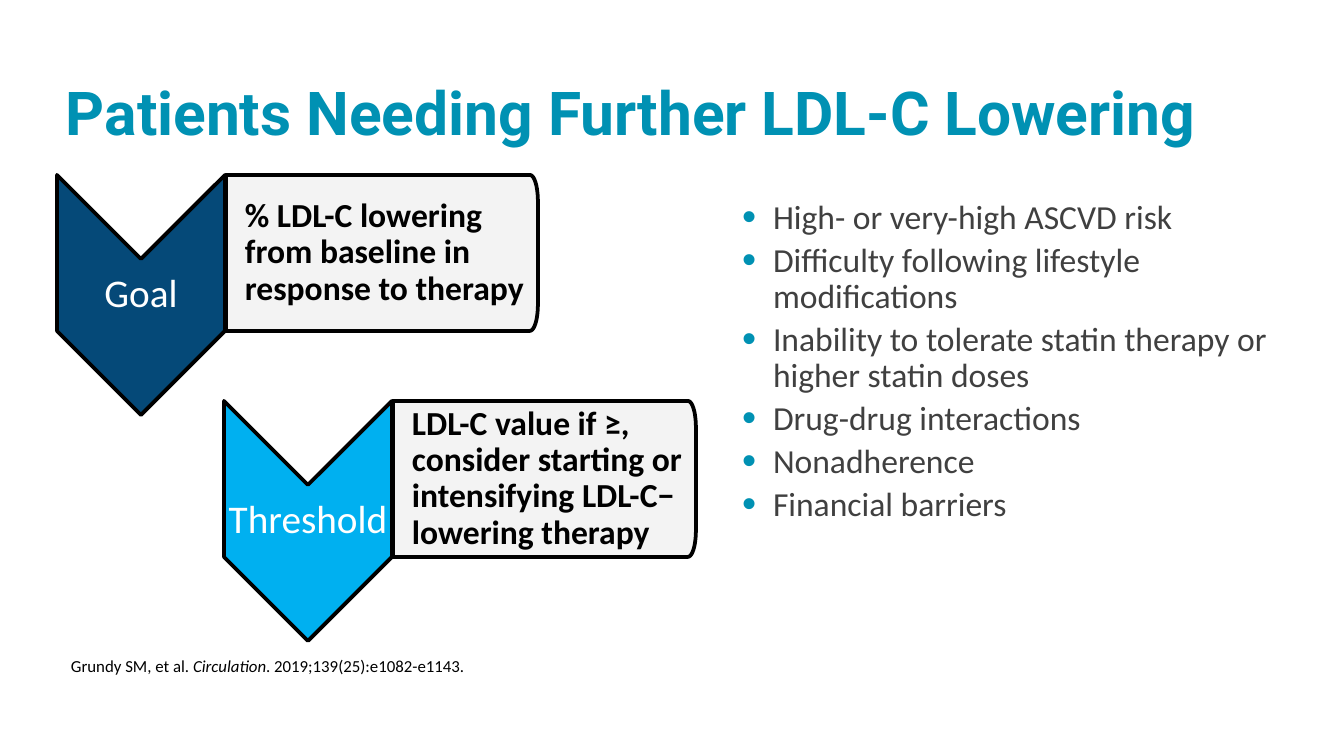
import math

import lxml.etree
import pptx
import pptx.dml.color
import pptx.enum.text
import pptx.oxml.ns
import pptx.util

PX = 914400 / 134.4  # EMU in one px
HUES = {
    "teal": "0091B3",
    "navy": "054978",
    "sky": "00B0F0",
    "pale": "F2F2F2",
    "gray": "404040",
    "black": "000000",
    "white": "FFFFFF",
}
ALIGN = pptx.enum.text.PP_ALIGN
ANCHOR = pptx.enum.text.MSO_ANCHOR

RISKS = [
    "High- or very-high ASCVD risk",
    "Difficulty following lifestyle modifications",
    "Inability to tolerate statin therapy or higher statin doses",
    "Drug-drug interactions",
    "Nonadherence",
    "Financial barriers",
]


def emu(px):
    return round(px * PX)


def color(name):
    return pptx.dml.color.RGBColor.from_string(HUES[name])


def add(parent, tag, **attrs):
    return lxml.etree.SubElement(parent, pptx.oxml.ns.qn(tag), attrs)


def set_frame(frame, pads=(0, 0, 0, 0), anchor=ANCHOR.TOP):
    frame.word_wrap = True
    frame.vertical_anchor = anchor
    frame.margin_left, frame.margin_top, frame.margin_right, frame.margin_bottom = map(emu, pads)


def style(para, size, hue, face="Calibri", bold=False, align=ALIGN.LEFT):
    para.alignment = align
    para.line_spacing = 0.9
    font = para.font
    font.name, font.size, font.bold = face, pptx.util.Pt(size), bold
    font.color.rgb = color(hue)


def add_box(slide, box, anchor=ANCHOR.TOP):
    frame = slide.shapes.add_textbox(*map(emu, box)).text_frame
    set_frame(frame, anchor=anchor)
    return frame


def add_title(slide, box, text):
    para = add_box(slide, box).paragraphs[0]
    para.text = text
    style(para, 32.4, "teal", face="Roboto", bold=True)


def add_list(slide, box, items):
    frame = add_box(slide, box)
    for i, item in enumerate(items):
        para = frame.add_paragraph() if i else frame.paragraphs[0]
        para.text = item
        # Teal bullet with a hanging indent
        props = para._p.get_or_add_pPr()
        props.set("marL", str(emu(31)))
        props.set("indent", str(emu(-31)))
        add(add(props, "a:buClr"), "a:srgbClr", val=HUES["teal"])
        add(props, "a:buSzPct", val="120000")
        add(props, "a:buFont", typeface="Arial")
        add(props, "a:buChar", char="•")
        if i:
            para.space_before = pptx.util.Pt(3.6)
        style(para, 18, "gray")


def add_cite(slide, box, parts):
    para = add_box(slide, box, ANCHOR.BOTTOM).paragraphs[0]
    for text, slant in parts:
        run = para.add_run()
        run.text = text
        run.font.italic = slant
    style(para, 9, "black")


def add_form(slide, points, hue):
    start, *rest = [(emu(x), emu(y)) for x, y in points]
    build = slide.shapes.build_freeform(*start)
    build.add_line_segments(rest, close=True)
    shape = build.convert_to_shape()
    shape.shadow.inherit = False
    shape.fill.solid()
    shape.fill.fore_color.rgb = color(hue)
    shape.line.color.rgb = color("black")
    shape.line.width = pptx.util.Pt(2)
    return shape


def add_step(slide, box, label, hue, note):
    left, top, width, high = box
    wide, drop = 168, 84  # arrow width and depth of its point
    mid, edge, base = left + wide / 2, left + wide, top + high

    # Arrow pointing down
    arrow = add_form(slide, [
        (left, top), (mid, top + drop), (edge, top),
        (edge, base), (mid, base + drop), (left, base),
    ], hue)
    set_frame(arrow.text_frame, (1, 86, 1, 86), ANCHOR.MIDDLE)
    para = arrow.text_frame.paragraphs[0]
    para.text = label
    style(para, 21, "white", align=ALIGN.CENTER)

    # Tab with its right corners rounded
    right, rx, ry = left + width, 8, 26
    turns = [math.radians(9 * n) for n in range(11)]
    curve = [(right - rx + rx * math.sin(t), ry - ry * math.cos(t)) for t in turns]
    upper = [(x, top + y) for x, y in curve]
    lower = [(x, base - y) for x, y in reversed(curve)]
    tab = add_form(slide, [(edge + 1, top), *upper, *lower, (edge + 1, base)], "pale")
    shade = tab._element.spPr.find(".//" + pptx.oxml.ns.qn("a:srgbClr"))
    add(shade, "a:alpha", val="90000")
    set_frame(tab.text_frame, (19, 9, 9, 9), ANCHOR.MIDDLE)
    para = tab.text_frame.paragraphs[0]
    para.text = note
    style(para, 18, "black", bold=True)


def main():
    deck = pptx.Presentation()
    deck.slide_width, deck.slide_height = emu(1344), emu(756)
    slide = deck.slides.add_slide(deck.slide_layouts[6])

    add_title(slide, (66, 83, 1210, 105), "Patients Needing Further LDL-C Lowering")
    add_list(slide, (742, 200, 531, 433), RISKS)
    add_cite(slide, (71, 644, 1177, 32), [
        ("Grundy SM, et al. ", False),
        ("Circulation", True),
        (". 2019;139(25):e1082-e1143.", False),
    ])
    add_step(slide, (57, 175, 481, 156), "Goal", "navy",
             "% LDL-C lowering from baseline in response to therapy")
    add_step(slide, (224, 401, 472, 156), "Threshold", "sky",
             "LDL-C value if ≥, consider starting or intensifying LDL-C− lowering therapy")

    deck.save("out.pptx")


if __name__ == "__main__":
    main()
